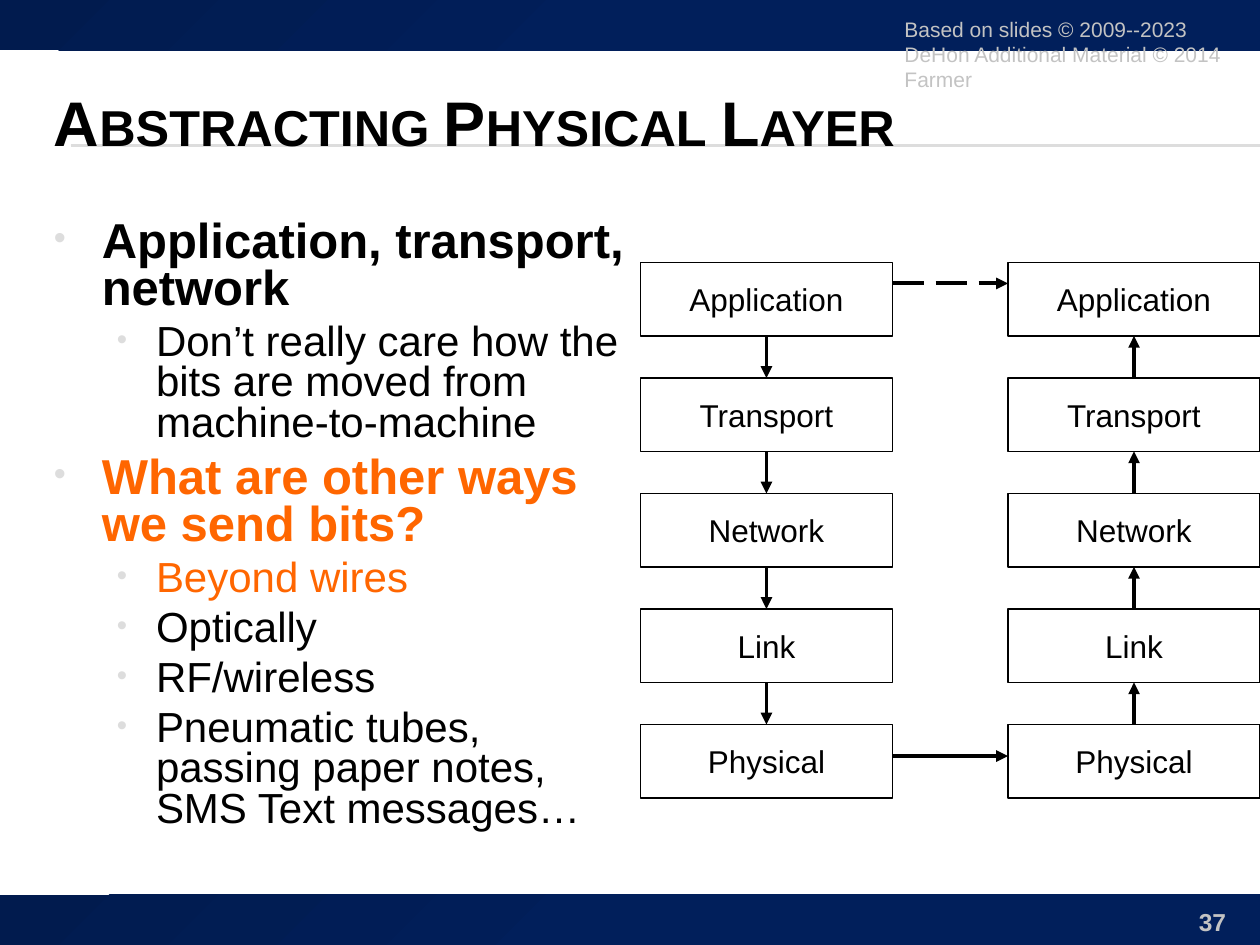
import pptx
import pptx.dml.color
import pptx.enum.dml
import pptx.enum.shapes
import pptx.enum.text
import pptx.oxml
import pptx.oxml.ns
import pptx.util

Pt = pptx.util.Pt
ALIGN = pptx.enum.text.PP_ALIGN
ANCHOR = pptx.enum.text.MSO_ANCHOR
RECT = pptx.enum.shapes.MSO_SHAPE.RECTANGLE
STRAIGHT = pptx.enum.shapes.MSO_CONNECTOR.STRAIGHT
TOP, BOTTOM = 0, 2

WIDTH, HEIGHT = 10, 7.5
CELL = 1 / 12  # grid step of the layer diagram, in inches
BLACK, ORANGE, GREY, PALE = "000000", "FF6600", "C3C3C3", "DDDDDD"

LAYERS = ["Application", "Transport", "Network", "Link", "Physical"]
POINTS = [  # level, colour, wording
    (0, BLACK, "Application, transport, network"),
    (1, BLACK, "Don’t really care how the bits are moved from machine-to-machine"),
    (0, ORANGE, "What are other ways we send bits?"),
    (1, ORANGE, "Beyond wires"),
    (1, BLACK, "Optically"),
    (1, BLACK, "RF/wireless"),
    (1, BLACK, "Pneumatic tubes, passing paper notes, SMS Text messages…"),
]
LEVELS = [  # size, bold, left margin, hanging indent
    (28, True, 0.38, -0.38),
    (24, False, 0.81, -0.31),
]


def inches(*lengths):
    return [pptx.util.Inches(length) for length in lengths]


def rgb(hex_code):
    return pptx.dml.color.RGBColor.from_string(hex_code)


def add_xml(parent, tag, attributes="", content=""):
    parent.append(pptx.oxml.parse_xml(
        f'<a:{tag} {pptx.oxml.ns.nsdecls("a")} {attributes}>{content}</a:{tag}>'))


def add_run(paragraph, wording, size, colour, bold=False):
    run = paragraph.add_run()
    run.text = wording
    run.font.name = "Arial"
    run.font.size = Pt(size)
    run.font.bold = bold
    run.font.color.rgb = rgb(colour)
    return run


def add_text_frame(shapes, box, anchor=ANCHOR.TOP):
    frame = shapes.add_textbox(*inches(*box)).text_frame
    frame.word_wrap = True
    frame.vertical_anchor = anchor
    return frame


def add_line(shapes, start, end, colour, weight, arrow=False):
    line = shapes.add_connector(STRAIGHT, *inches(*start, *end))
    line.line.color.rgb = rgb(colour)
    line.line.width = Pt(weight)
    if arrow:
        add_xml(line.line._get_or_add_ln(), "tailEnd", 'type="triangle"')
    add_xml(line._element.spPr, "effectLst")
    return line


def add_band(shapes, box):
    band = shapes.add_shape(RECT, *inches(*box))
    band.shadow.inherit = False
    band.line.fill.background()
    band.fill.gradient()
    band.fill.gradient_angle = 315
    dark, blue = band.fill.gradient_stops
    dark.position, dark.color.rgb = 0, rgb("011B4E")
    blue.position, blue.color.rgb = 0.5, rgb("011F5B")


def add_title(shapes, box):
    frame = add_text_frame(shapes, box, ANCHOR.MIDDLE)
    title = add_run(frame.paragraphs[0], "Abstracting Physical Layer", 36, BLACK, True)
    title.font._element.set("cap", "small")


def add_points(shapes, box):
    frame = add_text_frame(shapes, box)
    for index, (level, colour, wording) in enumerate(POINTS):
        size, bold, margin, indent = LEVELS[level]
        point = frame.add_paragraph() if index else frame.paragraphs[0]
        point.level = level
        point.line_spacing = 0.8
        point.space_before = Pt(0.23 * size)
        properties = point._p.get_or_add_pPr()
        properties.set("marL", str(pptx.util.Inches(margin)))
        properties.set("indent", str(pptx.util.Inches(indent)))
        add_xml(properties, "buClr", content=f'<a:srgbClr val="{PALE}"/>')
        add_xml(properties, "buSzPct", 'val="70000"')
        add_xml(properties, "buFont", 'typeface="Arial"')
        add_xml(properties, "buChar", 'char="•"')
        add_run(point, wording, size, colour, bold)


def add_layer(shapes, box, wording):
    layer = shapes.add_shape(RECT, *inches(*box))
    layer.shadow.inherit = False
    layer.fill.background()
    layer.line.color.rgb = rgb(BLACK)
    layer.line.width = Pt(0.75)
    layer.text_frame.word_wrap = False
    layer.text_frame.vertical_anchor = ANCHOR.MIDDLE
    label = layer.text_frame.paragraphs[0]
    label.alignment = ALIGN.CENTER
    add_run(label, wording, 18, BLACK)
    return layer


def add_stack(shapes, box, upward):
    """One machine's layers, joined by arrows that run up or down."""
    left, top, width, height = box
    stack = shapes.add_group_shape().shapes
    layer_height = 7 * CELL
    pitch = (height - layer_height) / (len(LAYERS) - 1)
    layers = [add_layer(stack, (left, top + row * pitch, width, layer_height), wording)
              for row, wording in enumerate(LAYERS)]
    for upper, lower in zip(layers, layers[1:]):
        arrow = add_line(stack, (left, top), (left, top), BLACK, 2.25, arrow=True)
        ends = [(upper, BOTTOM), (lower, TOP)]
        source, target = reversed(ends) if upward else ends
        arrow.begin_connect(*source)
        arrow.end_connect(*target)


def add_diagram(shapes, box):
    """Sending and receiving stacks with the links between them."""
    left, top, width, height = box
    stack_width = 24 * CELL
    receiver = left + width - stack_width
    add_stack(shapes, (receiver, top, stack_width, height), upward=True)
    add_stack(shapes, (left, top, stack_width, height), upward=False)
    physical, logical = [
        add_line(shapes, (left + stack_width, top + rows * CELL),
                 (receiver, top + rows * CELL), BLACK, 2.25, arrow=True)
        for rows in (47, 2)]
    logical.line.dash_style = pptx.enum.dml.MSO_LINE.LONG_DASH


def add_page_number(shapes, box):
    number = add_text_frame(shapes, box).paragraphs[0]
    number.alignment = ALIGN.RIGHT
    add_run(number, "37", 14, GREY, True)


def add_credit(shapes, box):
    credit = add_text_frame(shapes, box).paragraphs[0]
    add_run(credit, "Based on slides © 2009--2023 DeHon Additional Material © 2014 Farmer",
            12, GREY)


def main():
    deck = pptx.Presentation()
    deck.slide_width, deck.slide_height = inches(WIDTH, HEIGHT)
    shapes = deck.slides.add_slide(deck.slide_layouts[6]).shapes
    for rule in (1.15, 1.16):
        add_line(shapes, (0.56, rule), (WIDTH, rule), PALE, 0.75)
    for band_top in (0, HEIGHT - 0.4):
        add_band(shapes, (0, band_top, WIDTH, 0.4))
    add_title(shapes, (0.33, 0.5, 9.5, 0.92))
    add_points(shapes, (0.33, 1.7, 4.75, 5.3))
    add_page_number(shapes, (9, 7.15, 0.83, 0.27))
    add_diagram(shapes, (61 * CELL, 25 * CELL, 59 * CELL, 51 * CELL))
    add_credit(shapes, (7.08, 0.08, 2.75, 0.32))
    deck.save("out.pptx")


if __name__ == "__main__":
    main()
